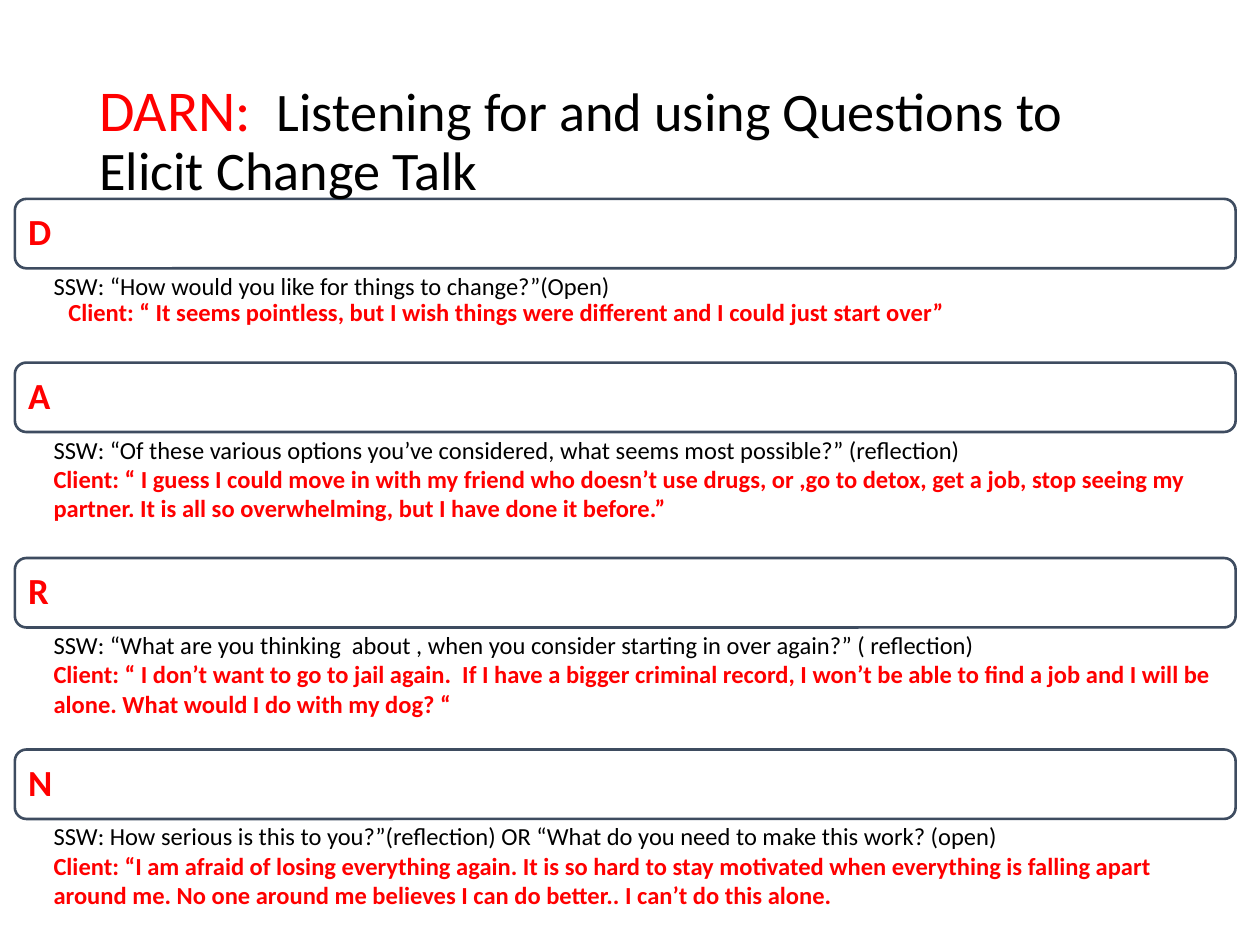
import pptx
import pptx.dml.color
import pptx.enum.shapes
import pptx.enum.text
import pptx.util
from pptx.util import Cm

COLORS = {"accent": "FF0000", "text": "000000", "box": "FFFFFF", "border": "3E4C60"}
FONT = "Calibri"

# Letter, height of the dialogue (cm), worker's question, client's answer
SECTIONS = [
    ("D", 1.9,
     "SSW: “How would you like for things to change?”(Open)",
     "Client: “ It seems pointless, but I wish things were different and I could just start over”"),
    ("A", 2.54,
     "SSW: “Of these various options you’ve considered, what seems most possible?” (reflection)",
     "Client: “ I guess I could move in with my friend who doesn’t use drugs, or ,go to detox, "
     "get a job, stop seeing my partner. It is all so overwhelming, but I have done it before.”"),
    ("R", 2.46,
     "SSW: “What are you thinking  about , when you consider starting in over again?” ( reflection)",
     "Client: “ I don’t want to go to jail again.  If I have a bigger criminal record, I won’t be "
     "able to find a job and I will be alone. What would I do with my dog? “"),
    ("N", 1.93,
     "SSW: How serious is this to you?”(reflection) OR “What do you need to make this work? (open)",
     "Client: “I am afraid of losing everything again. It is so hard to stay motivated when "
     "everything is falling apart around me. No one around me believes I can do better.. "
     "I can’t do this alone."),
]


def rgb(name):
    return pptx.dml.color.RGBColor.from_string(COLORS[name])


def style_font(font, size, color, bold=False):
    font.name = FONT
    font.size = pptx.util.Pt(size)
    font.bold = bold
    font.color.rgb = rgb(color)


def set_frame(frame, anchor, left, top, right, bottom):
    frame.word_wrap = True
    frame.auto_size = pptx.enum.text.MSO_AUTO_SIZE.NONE
    frame.vertical_anchor = anchor
    frame.margin_left, frame.margin_top = left, top
    frame.margin_right, frame.margin_bottom = right, bottom


def place_title(slide, left, top, width, height):
    title = slide.shapes.title
    title.left, title.top, title.width, title.height = left, top, width, height
    set_frame(title.text_frame, pptx.enum.text.MSO_ANCHOR.MIDDLE,
              Cm(0.25), Cm(0.13), Cm(0.25), Cm(0.13))
    heading = title.text_frame.paragraphs[0]
    heading.alignment = pptx.enum.text.PP_ALIGN.LEFT
    heading.line_spacing = 0.9
    for words, size, color in [
        ("DARN: ", 33, "accent"),
        (" Listening for and using Questions to Elicit Change Talk", 31, "text"),
    ]:
        run = heading.add_run()
        run.text = words
        style_font(run.font, size, color)
    # The heading lies over the first letter bar
    slide.shapes.element.append(title.element)


def add_letter_bar(slide, letter, left, top, width, height):
    bar = slide.shapes.add_shape(
        pptx.enum.shapes.MSO_SHAPE.ROUNDED_RECTANGLE, left, top, width, height)
    bar.shadow.inherit = False
    bar.fill.solid()
    bar.fill.fore_color.rgb = rgb("box")
    bar.line.color.rgb = rgb("border")
    bar.line.width = pptx.util.Pt(1.5)
    set_frame(bar.text_frame, pptx.enum.text.MSO_ANCHOR.MIDDLE, Cm(0.2), 0, Cm(0.2), 0)
    initial = bar.text_frame.paragraphs[0]
    initial.text = letter
    initial.alignment = pptx.enum.text.PP_ALIGN.LEFT
    initial.line_spacing = 0.9
    style_font(initial.font, 21, "accent", bold=True)


def add_dialogue(slide, question, answer, left, top, width, height):
    """Place the exchange and return the client's paragraph."""
    frame = slide.shapes.add_textbox(left, top, width, height).text_frame
    set_frame(frame, pptx.enum.text.MSO_ANCHOR.TOP, Cm(0.78), Cm(0.05), Cm(0.28), Cm(0.05))
    worker = frame.paragraphs[0]
    worker.text = question
    style_font(worker.font, 14, "text")
    client = frame.add_paragraph()
    client.text = answer
    style_font(client.font, 14, "accent", bold=True)
    return client


def place_sections(slide, left, top, width):
    bar_height = Cm(1.4)
    for index, (letter, dialogue_cm, question, answer) in enumerate(SECTIONS):
        add_letter_bar(slide, letter, left, top, width, bar_height)
        top += bar_height
        client = add_dialogue(slide, question, answer, left, top, width, Cm(dialogue_cm))
        if index == 0:
            # The first answer is indented and set tighter
            client.line_spacing = 0.9
            client._p.get_or_add_pPr().set("marL", str(Cm(0.3)))
        top += Cm(dialogue_cm)


def main():
    deck = pptx.Presentation()
    deck.slide_width, deck.slide_height = Cm(25.4), Cm(19.05)
    slide = deck.slides.add_slide(deck.slide_layouts[5])
    place_sections(slide, Cm(0.3), Cm(4.01), Cm(24.61))
    place_title(slide, Cm(1.75), Cm(1.02), Cm(21.9), Cm(3.68))
    deck.save("out.pptx")


if __name__ == "__main__":
    main()
